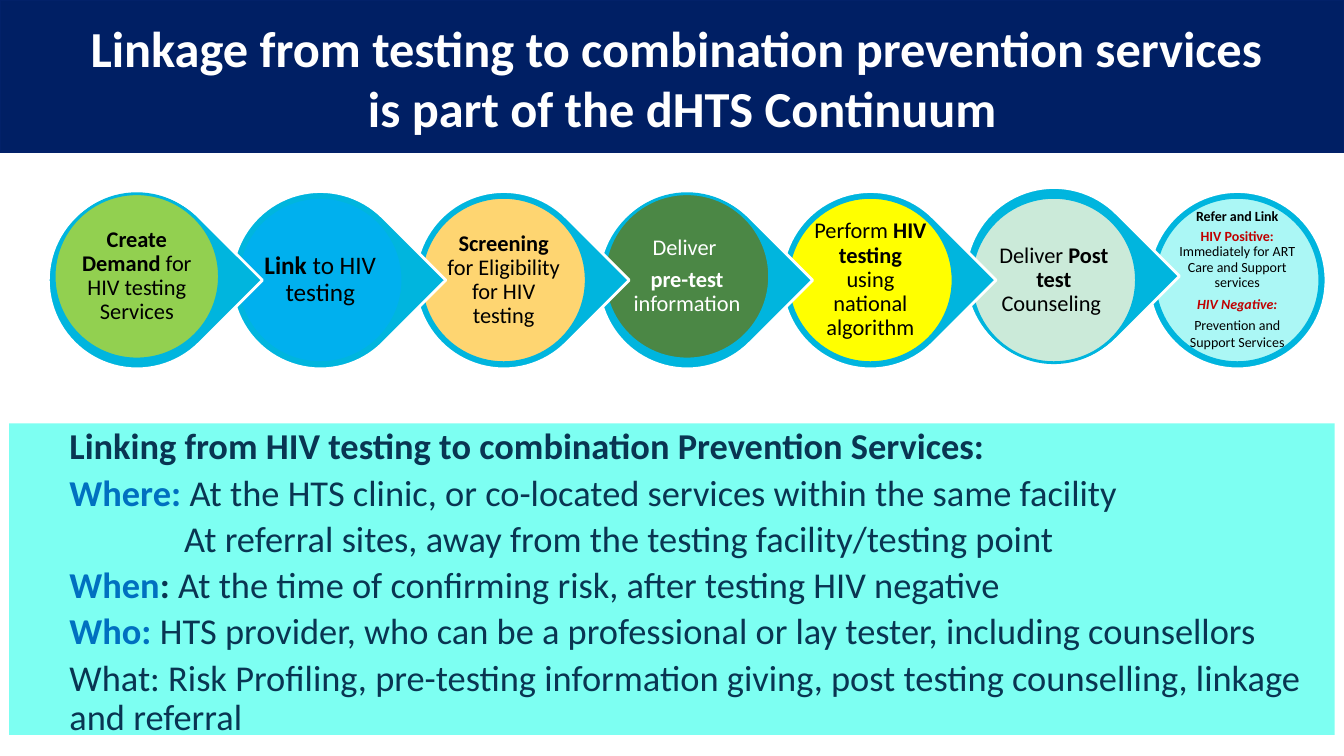
from dataclasses import dataclass

from lxml import etree
from pptx import Presentation
from pptx.dml.color import RGBColor
from pptx.enum.shapes import MSO_SHAPE
from pptx.enum.text import MSO_ANCHOR, PP_ALIGN
from pptx.oxml.ns import qn
from pptx.util import Pt

RECTANGLE, ELLIPSE, TEARDROP = MSO_SHAPE.RECTANGLE, MSO_SHAPE.OVAL, MSO_SHAPE.TEAR
MIDDLE, TOP = MSO_ANCHOR.MIDDLE, MSO_ANCHOR.TOP
CENTER, LEFT = PP_ALIGN.CENTER, PP_ALIGN.LEFT

COLORS = {
    "navy": "001F64", "navy line": "022169", "white": "FFFFFF", "black": "000000",
    "ring": "00B5DE", "red": "C00000", "panel": "7DFFF2", "ink": "093552",
    "heading": "0070C0", "lime": "92D050", "sky": "00B0F0", "amber": "FED571",
    "green": "548235", "yellow": "FFFF00", "mint": "E2F0D9", "aqua": "BEFFF8",
}
FONT = "Calibri"
SLIDE_WIDTH, SLIDE_HEIGHT = 960, 540
RING_LEFT, RING_TOP, RING_SIZE, RING_STEP = 34.5, 136.8, 126.7, 131
DISC_INSET, DISC_SIZE = 4.2, 118.1
LABEL_INSET, LABEL_SIZE = 16.8, 84.5


@dataclass
class Span:
    text: str
    bold: bool = False
    color: str = ""
    italic: bool = False


@dataclass
class Line:
    spans: list[Span]
    spacing: float = 0.9
    indent: float = 0


@dataclass
class Step:
    color: str
    lines: list[Line]
    size: float = 16
    text_color: str = "black"
    opacity: int = 100
    ring_shift: float = 0
    disc_shift: float = 0


STEPS = [
    Step("lime", [Line([Span("Create Demand ", True), Span("for HIV testing Services")])],
         disc_shift=-2.6),
    Step("sky", [Line([Span("Link", True), Span(" to HIV testing")])], size=18, opacity=90),
    Step("amber", [Line([Span("Screening", True), Span(" for Eligibility for HIV testing")])]),
    Step("green", [Line([Span("Deliver ")]),
                   Line([Span("pre-test ", True), Span("information")])],
         text_color="white", opacity=90, disc_shift=-2.6),
    Step("yellow", [Line([Span("Perform"), Span(" HIV testing", True),
                          Span(" using national algorithm")])]),
    Step("mint", [Line([Span("Deliver "), Span("Post test ", True), Span("Counseling ")])],
         opacity=90, ring_shift=-2.9),
    Step("aqua", [
        Line([Span("Refer and Link", True)]),
        Line([Span("HIV Positive: ", True, "red"),
              Span("Immediately for ART Care and Support services")]),
        Line([Span("HIV Negative:", True, "red", True)], spacing=1),
        Line([Span("Prevention and Support Services")], spacing=1),
    ], size=10, opacity=90),
]

PANEL_LINES = [
    Line([Span("Linking from HIV testing to combination Prevention Services:", True)]),
    Line([Span("Where: ", True, "heading"),
          Span("At the HTS clinic, or co-located services within the same facility")]),
    Line([Span("At referral sites, away from the testing facility/testing point")], indent=82),
    Line([Span("When", True, "heading"), Span(": ", True),
          Span("At the time of confirming risk, after testing HIV negative")]),
    Line([Span("Who: ", True, "heading"),
          Span("HTS provider, who can be a professional or lay tester, including counsellors")]),
    Line([Span("What: Risk Profiling, pre-testing information giving, post testing "
               "counselling, linkage and referral")]),
]


def rgb(name: str) -> RGBColor:
    return RGBColor.from_string(COLORS[name])


def add_shape(slide, kind, left: float, top: float, width: float, height: float,
              fill: str, line: str = "", opacity: int = 100):
    shape = slide.shapes.add_shape(kind, Pt(left), Pt(top), Pt(width), Pt(height))
    shape.shadow.inherit = False
    shape.fill.solid()
    shape.fill.fore_color.rgb = rgb(fill)
    if opacity < 100:
        color = shape.fill._xPr.find(".//" + qn("a:srgbClr"))
        etree.SubElement(color, qn("a:alpha")).set("val", str(opacity * 1000))
    if line:
        shape.line.color.rgb = rgb(line)
        shape.line.width = Pt(2)
    else:
        shape.line.fill.background()
    return shape


def add_text_box(slide, left: float, top: float, width: float, height: float):
    return slide.shapes.add_textbox(Pt(left), Pt(top), Pt(width), Pt(height)).text_frame


def write_lines(frame, lines: list[Line], size: float, color: str, alignment, anchor,
                margin: float = 0, before: float = 0, after: float = 0) -> None:
    """Fill a text frame; margin is the left margin of every paragraph."""
    frame.word_wrap = True
    frame.vertical_anchor = anchor
    for index, line in enumerate(lines):
        paragraph = frame.add_paragraph() if index else frame.paragraphs[0]
        paragraph.alignment = alignment
        paragraph.line_spacing = line.spacing
        paragraph.space_before = Pt(before if index else 0)
        paragraph.space_after = Pt(after)
        properties = paragraph._p.get_or_add_pPr()
        properties.set("marL", str(Pt(margin + line.indent)))
        properties.set("indent", "0")
        for span in line.spans:
            run = paragraph.add_run()
            run.text = span.text
            run.font.name = FONT
            run.font.size = Pt(size)
            run.font.bold = span.bold
            run.font.italic = span.italic
            run.font.color.rgb = rgb(span.color or color)


def add_title(slide) -> None:
    add_shape(slide, RECTANGLE, 0, 0, SLIDE_WIDTH, 108, "navy", "navy line")
    frame = add_text_box(slide, 16, 25.2, 943, 59.8)
    frame.text = ("Linkage from testing to combination prevention services \v"
                  "is part of the dHTS Continuum")
    frame.word_wrap = True
    frame.vertical_anchor = MIDDLE
    paragraph = frame.paragraphs[0]
    paragraph.alignment = CENTER
    for run in paragraph.runs:
        run.font.name = FONT
        run.font.size = Pt(36)
        run.font.bold = True
        run.font.color.rgb = rgb("white")


def add_step(slide, index: int, step: Step) -> None:
    left = RING_LEFT + index * RING_STEP
    is_last = index == len(STEPS) - 1
    ring = add_shape(slide, ELLIPSE if is_last else TEARDROP, left,
                     RING_TOP + step.ring_shift, RING_SIZE, RING_SIZE, "ring", "white")
    ring.rotation = 0 if is_last else 45
    disc_left, disc_top = left + DISC_INSET, RING_TOP + DISC_INSET + step.disc_shift
    add_shape(slide, ELLIPSE, disc_left, disc_top, DISC_SIZE, DISC_SIZE,
              step.color, "ring", step.opacity)
    frame = add_text_box(slide, disc_left + LABEL_INSET, disc_top + LABEL_INSET,
                         LABEL_SIZE, LABEL_SIZE)
    inset = Pt(step.size / 10)
    frame.margin_left = frame.margin_right = frame.margin_top = frame.margin_bottom = inset
    write_lines(frame, step.lines, step.size, step.text_color, CENTER, MIDDLE,
                after=round(step.size * 0.35, 1))


def main() -> None:
    presentation = Presentation()
    presentation.slide_width, presentation.slide_height = Pt(SLIDE_WIDTH), Pt(SLIDE_HEIGHT)
    slide = presentation.slides.add_slide(presentation.slide_layouts[6])
    add_title(slide)
    # Each tip overlaps the next step, so the last step is drawn first.
    for index, step in reversed(list(enumerate(STEPS))):
        add_step(slide, index, step)
    panel = add_shape(slide, RECTANGLE, 6.5, 302.4, 946.8, 222.5, "panel")
    write_lines(panel.text_frame, PANEL_LINES, 26, "ink", LEFT, TOP, margin=36, before=5)
    presentation.save("out.pptx")


if __name__ == "__main__":
    main()
